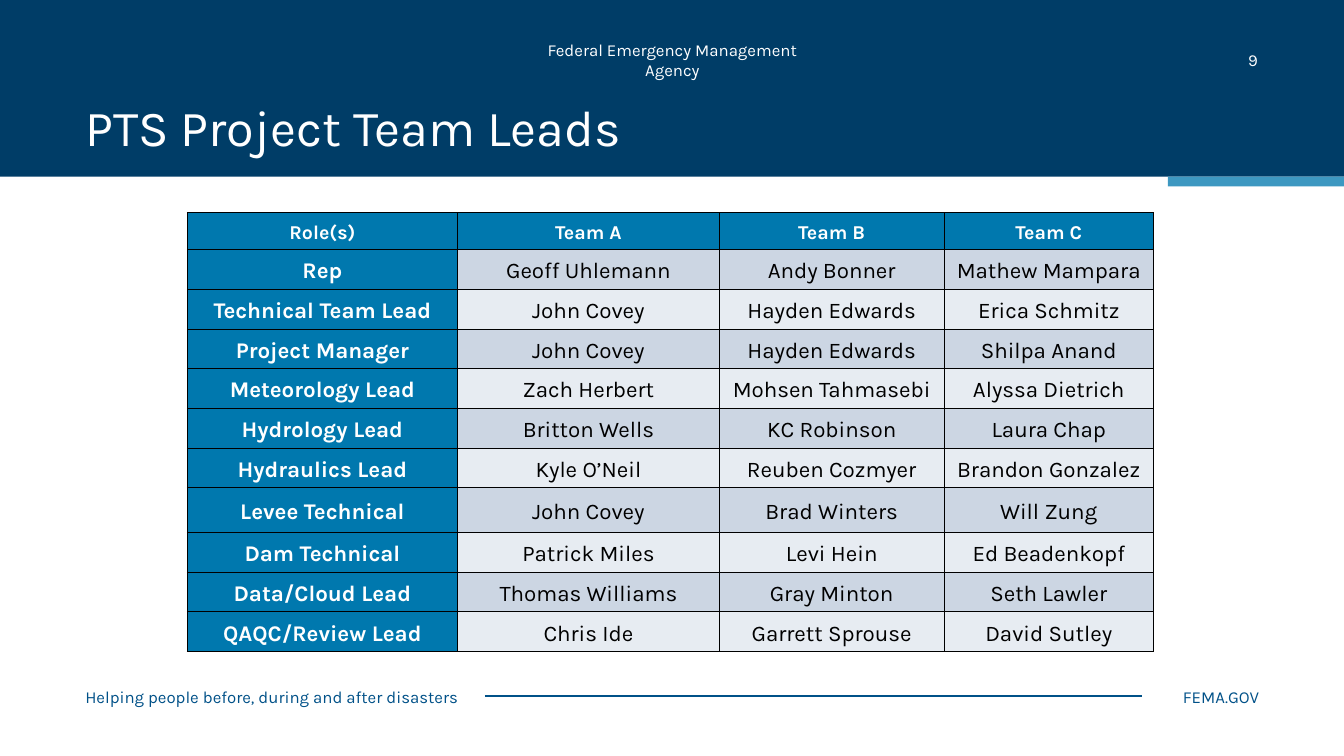
from dataclasses import dataclass

from lxml.etree import SubElement
from pptx import Presentation
from pptx.dml.color import RGBColor
from pptx.enum.shapes import MSO_CONNECTOR, MSO_SHAPE
from pptx.enum.text import MSO_ANCHOR, MSO_AUTO_SIZE, PP_ALIGN
from pptx.oxml.ns import qn
from pptx.util import Cm, Pt


@dataclass(frozen=True)
class Theme:
    font: str = "Karla"
    white: str = "FFFFFF"
    black: str = "000000"
    navy: str = "003D67"
    blue: str = "005188"
    sky: str = "3D98C1"
    head: str = "0078AE"
    bands: tuple = ("E7ECF2", "CCD6E3")
    title: int = 36
    body: int = 16
    label: int = 14
    small: int = 12


THEME = Theme()
LEFT, MID, RIGHT = PP_ALIGN.LEFT, PP_ALIGN.CENTER, PP_ALIGN.RIGHT

COLS = (6.81, 6.6, 5.66, 5.28)
LEVEE = 7
ROWS = (
    ("Role(s)", "Team A", "Team B", "Team C"),
    ("Rep", "Geoff Uhlemann", "Andy Bonner", "Mathew Mampara"),
    ("Technical Team Lead", "John Covey", "Hayden Edwards", "Erica Schmitz"),
    ("Project Manager", "John Covey", "Hayden Edwards", "Shilpa Anand"),
    ("Meteorology Lead", "Zach Herbert", "Mohsen Tahmasebi", "Alyssa Dietrich"),
    ("Hydrology Lead", "Britton Wells", "KC Robinson", "Laura Chap"),
    ("Hydraulics Lead", "Kyle O’Neil", "Reuben Cozmyer", "Brandon Gonzalez"),
    ("Levee Technical", "John Covey", "Brad Winters", "Will Zung"),
    ("Dam Technical", "Patrick Miles", "Levi Hein", "Ed Beadenkopf"),
    ("Data/Cloud Lead", "Thomas Williams", "Gray Minton", "Seth Lawler"),
    ("QAQC/Review Lead", "Chris Ide", "Garrett Sprouse", "David Sutley"),
)


def write(frame, text, size=THEME.small, color=THEME.white, bold=False,
          align=LEFT, lead=None, after=None):
    frame.word_wrap = True
    para = frame.paragraphs[0]
    para.alignment = align
    para.line_spacing = lead
    para.space_after = after
    run = para.add_run()
    run.text = text
    font = run.font
    font.name, font.size, font.bold = THEME.font, Pt(size), bold
    font.color.rgb = RGBColor.from_string(color)


def paint(fill, color):
    fill.solid()
    fill.fore_color.rgb = RGBColor.from_string(color)


def add_bar(slide, x, y, w, h, color):
    bar = slide.shapes.add_shape(MSO_SHAPE.RECTANGLE, Cm(x), Cm(y), Cm(w), Cm(h))
    bar.shadow.inherit = False
    paint(bar.fill, color)
    bar.line.fill.background()


def add_label(slide, x, y, w, text, anchor=MSO_ANCHOR.MIDDLE, **style):
    frame = slide.shapes.add_textbox(Cm(x), Cm(y), Cm(w), Cm(0.76)).text_frame
    frame.vertical_anchor = anchor
    write(frame, text, **style)


def add_rule(slide, x, y, end, color):
    rule = slide.shapes.add_connector(
        MSO_CONNECTOR.STRAIGHT, Cm(x), Cm(y), Cm(end), Cm(y))
    rule.line.width = Pt(1.5)
    rule.line.color.rgb = RGBColor.from_string(color)
    SubElement(rule.element.spPr, qn("a:effectLst"))


def set_title(slide, text):
    title = slide.shapes.title
    title.left, title.top = Cm(1.9), Cm(2.54)
    title.width, title.height = Cm(30.07), Cm(1.27)
    frame = title.text_frame
    frame.auto_size = MSO_AUTO_SIZE.NONE
    frame.vertical_anchor = MSO_ANCHOR.MIDDLE
    write(frame, text, size=THEME.title, lead=Pt(44))
    # Bring the title in front of the band
    title.element.getparent().append(title.element)


def edge(cell):
    props = cell._tc.get_or_add_tcPr()
    for side in ("lnL", "lnR", "lnT", "lnB"):
        line = SubElement(props, qn(f"a:{side}"), w=str(Pt(0.75)))
        fill = SubElement(line, qn("a:solidFill"))
        SubElement(fill, qn("a:srgbClr"), val=THEME.black)


def add_grid(slide, x, y):
    highs = [0.93] + [1.0] * (len(ROWS) - 1)
    highs[LEVEE] = 1.13
    grid = slide.shapes.add_table(
        len(ROWS), len(COLS), Cm(x), Cm(y), Cm(sum(COLS)), Cm(sum(highs))).table
    for col, wide in zip(grid.columns, COLS):
        col.width = Cm(wide)
    for r, (names, high) in enumerate(zip(ROWS, highs)):
        grid.rows[r].height = Cm(high)
        for c, name in enumerate(names):
            cell = grid.cell(r, c)
            lead = r == 0 or c == 0
            edge(cell)
            paint(cell.fill, THEME.head if lead else THEME.bands[r % 2])
            cell.vertical_anchor = MSO_ANCHOR.MIDDLE
            cell.margin_left = cell.margin_right = Cm(0.18)
            cell.margin_top = cell.margin_bottom = Cm(0)
            write(cell.text_frame, name, bold=lead, align=MID, lead=1.15,
                  size=THEME.body if r else THEME.label,
                  color=THEME.white if lead else THEME.black,
                  after=Pt(0 if r == LEVEE else 8))


def main():
    deck = Presentation()
    deck.slide_width, deck.slide_height = Cm(33.87), Cm(19.05)
    slide = deck.slides.add_slide(deck.slide_layouts[5])

    # Header
    add_bar(slide, 0, 0, 33.87, 4.45, THEME.navy)
    add_bar(slide, 29.43, 4.45, 4.44, 0.25, THEME.sky)
    add_label(slide, 12.88, 1.12, 8.13, "Federal Emergency Management Agency",
              align=MID)
    add_label(slide, 29.41, 1.12, 2.54, "9", anchor=MSO_ANCHOR.TOP, align=RIGHT)
    set_title(slide, "PTS Project Team Leads")

    # Team leads
    add_grid(slide, 4.72, 5.36)

    # Footer
    add_label(slide, 1.9, 17.17, 10.67,
              "Helping people before, during and after disasters",
              color=THEME.blue)
    add_rule(slide, 12.22, 17.53, 28.78, THEME.blue)
    add_label(slide, 29.44, 17.17, 2.54, "FEMA.GOV", color=THEME.blue,
              align=RIGHT)

    deck.save("out.pptx")


if __name__ == "__main__":
    main()
